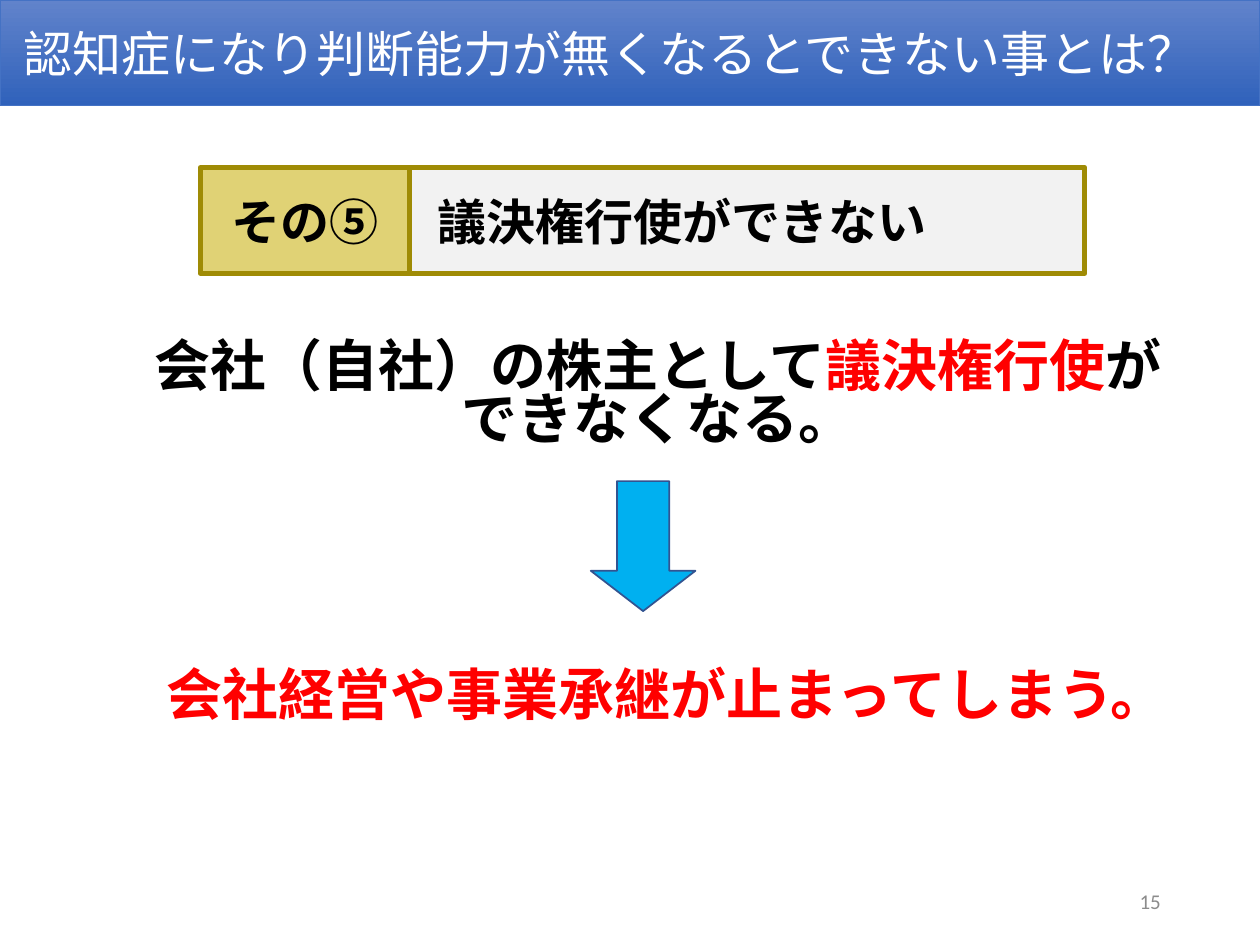
"""Build the slide on losing voting rights through dementia."""
import pptx
import pptx.util
import pptx.dml.color
import pptx.enum.shapes
import pptx.enum.text
import pptx.oxml
import pptx.oxml.ns

Cm = pptx.util.Cm
SHAPES = pptx.enum.shapes.MSO_SHAPE
ALIGN = pptx.enum.text.PP_ALIGN
COLORS = {
    "black": "000000", "white": "FFFFFF", "red": "FF0000", "grey": "8C8C8C",
    "gold": "D4C03B", "gold_line": "9F8B05", "panel": "F2F2F2",
    "arrow": "00B0F0", "arrow_line": "325491", "title_line": "4472C4",
    "title_top": "6183CB", "title_bottom": "3062BB",
}
JAPANESE = "Noto Sans CJK JP"
TITLE = {"size": 28, "name": JAPANESE, "bold": False}
LABEL = {"size": 28, "name": JAPANESE, "bold": True}
BODY = {"size": 32, "name": JAPANESE, "bold": True}
NUMBER = {"size": 12, "name": "Calibri", "bold": False}

TEXTS = [
    {"box": (17.93, 17.65, 5.72, 1.02), "format": NUMBER, "align": ALIGN.RIGHT,
     "lines": [[("15", "grey")]]},
    {"box": (1.17, 13.03, 23.95, 1.88), "format": BODY, "align": ALIGN.CENTER, "left": 0.86,
     "lines": [[("会社経営や事業承継が止まってしまう。", "red")]]},
    {"box": (0.99, 7.06, 23.95, 1.88), "format": BODY, "align": ALIGN.CENTER, "left": 0.86,
     "spacing": 0.8,
     "lines": [[("会社（自社）の株主として", "black"), ("議決権行使", "red"), ("が", "black")],
               [("できなくなる。", "black")]]},
]
SHAPE_ITEMS = [
    {"kind": SHAPES.RECTANGLE, "box": (4.04, 3.38, 4.22, 2.13), "fill": "gold", "alpha": 70,
     "line": ("gold_line", 3), "format": LABEL, "align": ALIGN.CENTER,
     "lines": [[("その⑤", "black")]]},
    {"kind": SHAPES.RECTANGLE, "box": (8.26, 3.38, 13.61, 2.13), "fill": "panel",
     "line": ("gold_line", 3), "format": LABEL, "align": ALIGN.LEFT, "left": 0.56,
     "lines": [[("議決権行使ができない", "black")]]},
    {"kind": SHAPES.DOWN_ARROW, "box": (11.91, 9.7, 2.11, 2.62), "fill": "arrow",
     "line": ("arrow_line", 1), "adjustments": (0.5, 0.385)},
    {"kind": SHAPES.RECTANGLE, "box": (0, 0, 25.4, 2.13),
     "gradient": ("title_top", "title_bottom"), "line": ("title_line", 0.5),
     "format": TITLE, "align": ALIGN.LEFT,
     "lines": [[(" 認知症になり判断能力が無くなるとできない事とは？", "white")]]},
]


def color(name):
    return pptx.dml.color.RGBColor.from_string(COLORS[name])


def write_text(shape, item):
    frame = shape.text_frame
    settings = {"word_wrap": True, "vertical_anchor": pptx.enum.text.MSO_ANCHOR.MIDDLE,
                "margin_left": Cm(item.get("left", 0.25)), "margin_right": Cm(0.25),
                "margin_top": Cm(0.13), "margin_bottom": Cm(0.13)}
    for name, value in settings.items():
        setattr(frame, name, value)
    for index, line in enumerate(item["lines"]):
        paragraph = frame.add_paragraph() if index else frame.paragraphs[0]
        paragraph.alignment = item["align"]
        paragraph.line_spacing = item.get("spacing")
        for text, color_name in line:
            run = paragraph.add_run()
            run.text = text
            for name, value in item["format"].items():
                setattr(run.font, name, pptx.util.Pt(value) if name == "size" else value)
            run.font.color.rgb = color(color_name)
            east_asian = pptx.oxml.parse_xml(
                f'<a:ea {pptx.oxml.ns.nsdecls("a")} typeface="{item["format"]["name"]}"/>')
            run.font._element.append(east_asian)


def paint(shape, item):
    shape.shadow.inherit = False
    if "gradient" in item:
        shape.fill.gradient()
        shape.fill.gradient_angle = 270
        for stop, name in zip(shape.fill.gradient_stops, item["gradient"]):
            stop.color.rgb = color(name)
        for stop, position in zip(shape.fill.gradient_stops, (0, 1)):
            stop.position = position
    else:
        shape.fill.solid()
        shape.fill.fore_color.rgb = color(item["fill"])
    if "alpha" in item:
        solid = shape._element.spPr.find(pptx.oxml.ns.qn("a:solidFill"))
        solid[0].append(pptx.oxml.parse_xml(
            f'<a:alpha {pptx.oxml.ns.nsdecls("a")} val="{item["alpha"] * 1000}"/>'))
    line_color, width = item["line"]
    shape.line.color.rgb = color(line_color)
    shape.line.width = pptx.util.Pt(width)
    for index, value in enumerate(item.get("adjustments", ())):
        shape.adjustments[index] = value


def main():
    presentation = pptx.Presentation()
    presentation.slide_width, presentation.slide_height = Cm(25.4), Cm(19.05)
    slide = presentation.slides.add_slide(presentation.slide_layouts[6])
    for item in SHAPE_ITEMS:
        shape = slide.shapes.add_shape(item["kind"], *map(Cm, item["box"]))
        paint(shape, item)
        if "lines" in item:
            write_text(shape, item)
    for item in TEXTS:
        write_text(slide.shapes.add_textbox(*map(Cm, item["box"])), item)
    presentation.save("out.pptx")


if __name__ == "__main__":
    main()
